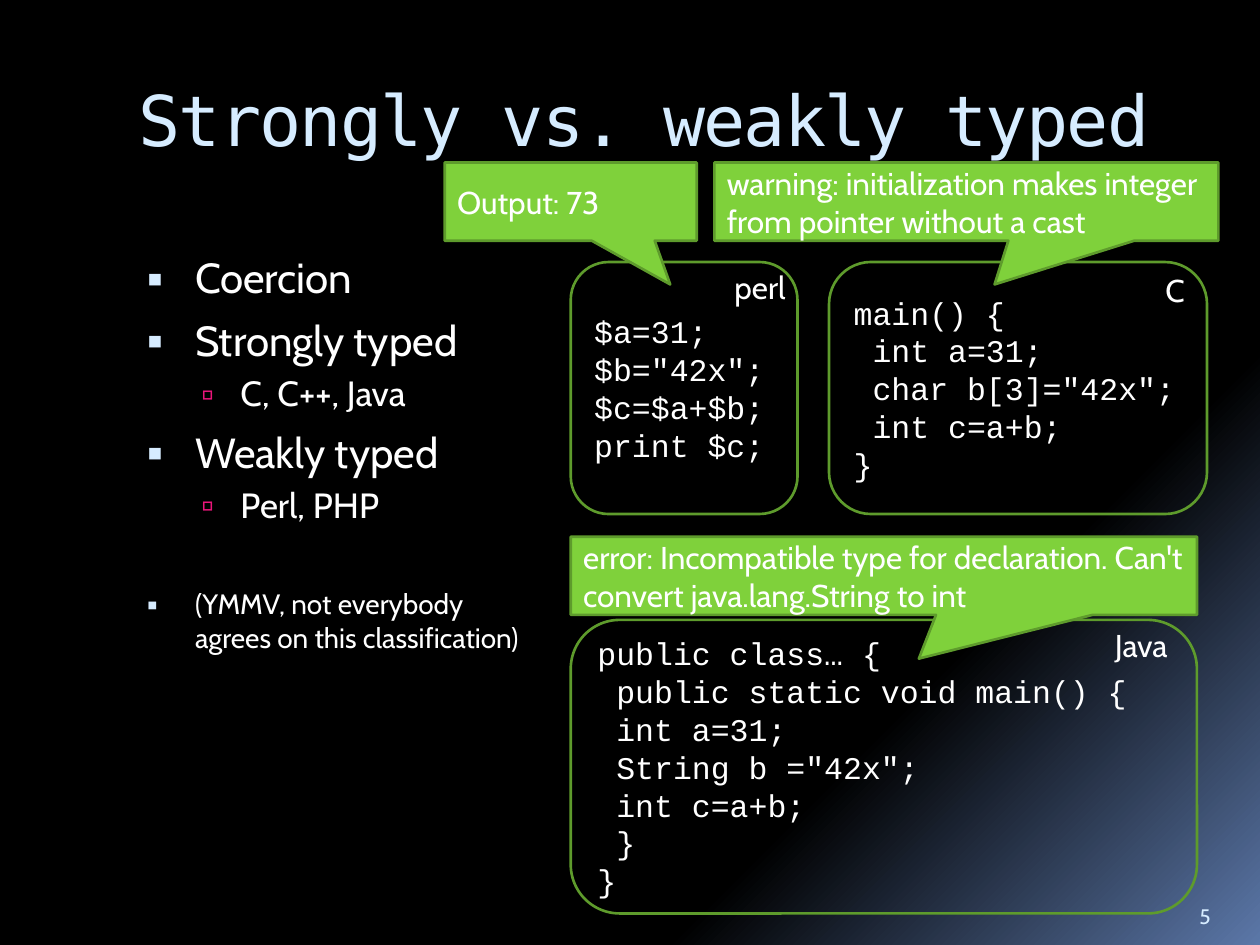
"""Build the slide on strongly versus weakly typed languages."""
from lxml.etree import SubElement
from pptx import Presentation
from pptx.dml.color import RGBColor
from pptx.enum.shapes import MSO_SHAPE as Shape
from pptx.enum.text import MSO_ANCHOR as Anchor, MSO_AUTO_SIZE as AutoSize, PP_ALIGN as Align
from pptx.oxml.ns import qn
from pptx.util import Inches, Pt

BLACK = RGBColor(0x00, 0x00, 0x00)
WHITE = RGBColor(0xFF, 0xFF, 0xFF)
BLUE = RGBColor(0x5B, 0x77, 0xA8)
PALE = RGBColor(0xD6, 0xEC, 0xFF)
PINK = RGBColor(0xEA, 0x15, 0x7A)
GREEN = RGBColor(0x7F, 0xD1, 0x3B)
DARK_GREEN = RGBColor(0x5E, 0x9B, 0x2C)
SANS, MONO, CODE = "Cabin", "DejaVu Sans Mono", "Courier New"


def write(shape, text, size, font=SANS, color=WHITE, wrap=True):
    frame = shape.text_frame
    frame.text = text
    frame.word_wrap = wrap
    for para in frame.paragraphs:
        para.alignment = Align.LEFT
        for span in para.runs:
            span.font.size = Pt(size)
            span.font.name = font
            span.font.color.rgb = color
    return frame


def outlined(kind, left, top, width, height, text, font):
    shape = page.shapes.add_shape(
        kind, Inches(left), Inches(top), Inches(width), Inches(height))
    shape.shadow.inherit = False
    shape.fill.background()
    shape.line.color.rgb = DARK_GREEN
    shape.line.width = Pt(1.5)
    write(shape, text, 18, font).vertical_anchor = Anchor.MIDDLE
    return shape


deck = Presentation()
deck.slide_width, deck.slide_height = Inches(10), Inches(7.5)
page = deck.slides.add_slide(deck.slide_layouts[6])

backdrop = page.background.fill
backdrop.gradient()
backdrop.gradient_angle = 315
for stop, position, color in zip(backdrop.gradient_stops, (0.73, 1), (BLACK, BLUE)):
    stop.position = position
    stop.color.rgb = color

title = page.shapes.add_textbox(Inches(1), Inches(0.56), Inches(8.5), Inches(1))
heading = write(title, "Strongly vs. weakly typed", 40, MONO, PALE)
heading.paragraphs[0].runs[0].font._element.set("spc", "-100")

points = [
    ("Coercion", 0, 24, 7),
    ("Strongly typed", 0, 24, 7),
    ("C, C++, Java", 1, 20, 4),
    ("Weakly typed", 0, 24, 7),
    ("Perl, PHP", 1, 20, 4),
    ("(YMMV, not everybody agrees on this classification)", 0, 16, 35),
]
levels = [(0.45, -0.38, "▪", PALE, 95), (0.81, -0.31, "▫", PINK, 90)]
body = page.shapes.add_textbox(Inches(1), Inches(1.95), Inches(3.25), Inches(5))
outline = write(body, "\n".join(point[0] for point in points), 24)
for para, (text, level, size, gap) in zip(outline.paragraphs, points):
    margin, indent, mark, color, scale = levels[level]
    para.level = level
    para.space_before = Pt(gap)
    para.runs[0].font.size = Pt(size)
    props = para._p.get_or_add_pPr()
    props.set("marL", str(Inches(margin)))
    props.set("indent", str(Inches(indent)))
    SubElement(SubElement(props, qn("a:buClr")), qn("a:srgbClr"), val=str(color))
    SubElement(props, qn("a:buSzPct"), val=str(scale * 1000))
    SubElement(props, qn("a:buFont"), typeface=SANS)
    SubElement(props, qn("a:buChar"), char=mark)

number = page.shapes.add_textbox(Inches(9.42), Inches(7.02), Inches(0.5), Inches(0.4))
write(number, "5", 12, color=PALE).vertical_anchor = Anchor.BOTTOM

perl_code = '$a=31;\n$b="42x";\n$c=$a+$b;\nprint $c;'
c_code = 'main() {\n int a=31;\n char b[3]="42x";\n int c=a+b;\n}'
java_code = ('public class… {\n public static void main() {\n int a=31;\n'
             ' String b ="42x";\n int c=a+b;\n }\n}')
for left, top, width, height, code in [
    (4.53, 2.08, 1.8, 2, perl_code),
    (6.58, 2.08, 3, 2, c_code),
    (4.53, 4.92, 4.97, 2.33, java_code),
]:
    outlined(Shape.ROUNDED_RECTANGLE, left, top, width, height, code, CODE)

for left, top, width, tip, message in [
    (5.67, 1.29, 4, 0.056,
     "warning: initialization makes integer from pointer without a cast"),
    (3.53, 1.29, 2, 0.395, "Output: 73"),
    (4.53, 4.26, 4.97, 0.056,
     "error: Incompatible type for declaration. Can't convert java.lang.String to int"),
]:
    callout = outlined(Shape.RECTANGULAR_CALLOUT, left, top, width, 0.62, message, SANS)
    callout.fill.solid()
    callout.fill.fore_color.rgb = GREEN
    callout.adjustments[0] = tip
    callout.adjustments[1] = 1.06

for left, top, width, language in [
    (5.73, 2.08, 0.62, "perl"),
    (9.15, 2.1, 0.35, "C"),
    (8.75, 4.92, 0.66, "Java"),
]:
    label = page.shapes.add_textbox(Inches(left), Inches(top), Inches(width), Inches(0.4))
    write(label, language, 18, wrap=False).auto_size = AutoSize.SHAPE_TO_FIT_TEXT

deck.save("out.pptx")
